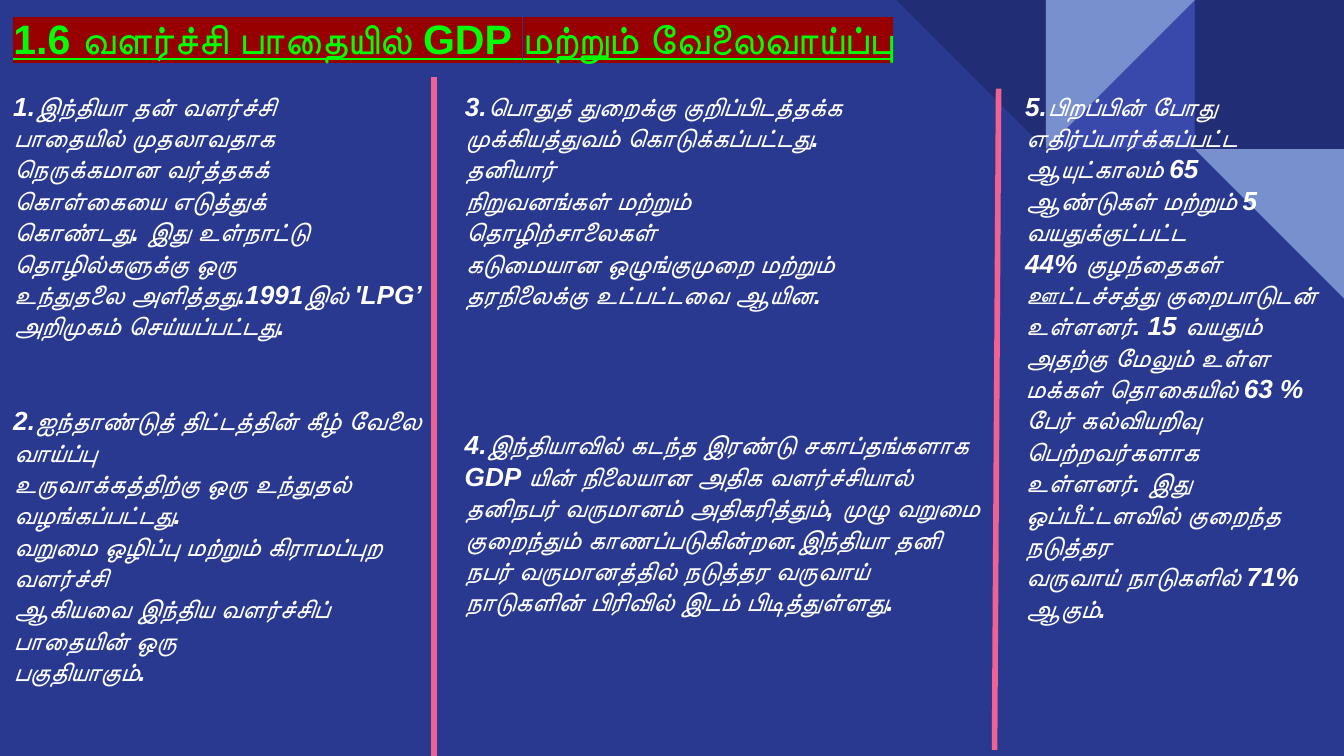
from dataclasses import dataclass

from lxml import etree
from pptx import Presentation
from pptx import util as u
from pptx.dml import color
from pptx.enum import shapes, text
from pptx.oxml import ns


@dataclass(frozen=True)
class Theme:
    background: str = "2A3990"
    navy: str = "212D74"
    indigo: str = "3949AB"
    sky: str = "7890CD"
    divider: str = "F06292"
    title: str = "00FF00"
    highlight: str = "980000"
    body: str = "FFFFFF"
    font: str = "Arial"
    title_size: int = 22
    body_size: int = 14
    divider_width: int = 3


THEME = Theme()
SLIDE_WIDTH = 10
SLIDE_HEIGHT = SLIDE_WIDTH * 9 / 16
TILE = 1.11
TILE_LEFT = SLIDE_WIDTH - 3 * TILE

POINTS = [
    ((0, 0.57, 3.28, 2.29), [
        "1.இந்தியா தன் வளர்ச்சி",
        "பாதையில் முதலாவதாக",
        "நெருக்கமான வர்த்தகக்",
        "கொள்கையை எடுத்துக்",
        "கொண்டது. இது உள்நாட்டு",
        "தொழில்களுக்கு ஒரு",
        "உந்துதலை அளித்தது.1991இல் 'LPG’ அறிமுகம் செய்யப்பட்டது.",
    ]),
    ((0, 2.91, 3.28, 2.29), [
        "2.ஐந்தாண்டுத் திட்டத்தின் கீழ் வேலை வாய்ப்பு",
        "உருவாக்கத்திற்கு ஒரு உந்துதல் வழங்கப்பட்டது.",
        "வறுமை ஒழிப்பு மற்றும் கிராமப்புற வளர்ச்சி",
        "ஆகியவை இந்திய வளர்ச்சிப் பாதையின் ஒரு",
        "பகுதியாகும்.",
    ]),
    ((3.36, 0.57, 3.28, 2.52), [
        "3.பொதுத் துறைக்கு குறிப்பிடத்தக்க",
        "முக்கியத்துவம் கொடுக்கப்பட்டது. தனியார்",
        "நிறுவனங்கள் மற்றும் தொழிற்சாலைகள்",
        "கடுமையான ஒழுங்குமுறை மற்றும் தரநிலைக்கு உட்பட்டவை ஆயின.",
    ]),
    ((3.36, 3.09, 4.04, 2.52), [
        "4.இந்தியாவில் கடந்த இரண்டு சகாப்தங்களாக",
        "GDP யின் நிலையான அதிக வளர்ச்சியால் தனிநபர் வருமானம் அதிகரித்தும், "
        "முழு வறுமை குறைந்தும் காணப்படுகின்றன.இந்தியா தனி நபர் வருமானத்தில் "
        "நடுத்தர வருவாய் நாடுகளின் பிரிவில் இடம் பிடித்துள்ளது.",
    ]),
    ((7.53, 0.57, 2.47, 5.06), [
        "5.பிறப்பின் போது எதிர்ப்பார்க்கப்பட்ட",
        "ஆயுட்காலம் 65 ஆண்டுகள் மற்றும் 5 வயதுக்குட்பட்ட",
        "44% குழந்தைகள் ஊட்டச்சத்து குறைபாடுடன்",
        "உள்ளனர். 15 வயதும் அதற்கு மேலும் உள்ள மக்கள் தொகையில் 63 % பேர் "
        "கல்வியறிவு பெற்றவர்களாக",
        "உள்ளனர். இது ஒப்பீட்டளவில் குறைந்த நடுத்தர",
        "வருவாய் நாடுகளில் 71% ஆகும்.",
    ]),
]


def rgb(value):
    return color.RGBColor.from_string(value)


def add_tile(slide, column, row, fill, kind=shapes.MSO_SHAPE.RIGHT_TRIANGLE,
             rotation=0, flipped=False):
    left, top = TILE_LEFT + column * TILE, row * TILE
    tile = slide.shapes.add_shape(
        kind, u.Inches(left), u.Inches(top), u.Inches(TILE), u.Inches(TILE))
    tile.shadow.inherit = False
    tile.fill.solid()
    tile.fill.fore_color.rgb = rgb(fill)
    tile.line.fill.background()
    tile.rotation = rotation
    if flipped:
        tile._element.spPr.get_or_add_xfrm().set("flipH", "1")


def add_corner_pattern(slide):
    add_tile(slide, 2, 0, THEME.navy, kind=shapes.MSO_SHAPE.RECTANGLE)
    add_tile(slide, 1, 0, THEME.indigo, flipped=True)
    add_tile(slide, 1, 0, THEME.sky, rotation=180, flipped=True)
    add_tile(slide, 0, 0, THEME.navy, rotation=180)
    add_tile(slide, 2, 1, THEME.sky, rotation=180)


def prepare_frame(frame):
    frame.word_wrap = True
    frame.auto_size = text.MSO_AUTO_SIZE.SHAPE_TO_FIT_TEXT
    frame.vertical_anchor = text.MSO_ANCHOR.TOP
    frame.margin_left = frame.margin_right = u.Inches(0.1)
    frame.margin_top = frame.margin_bottom = u.Inches(0.1)


def add_run(paragraph, wording, size, fill):
    paragraph.alignment = text.PP_ALIGN.LEFT
    run = paragraph.add_run()
    run.text = wording
    run.font.size = u.Pt(size)
    run.font.bold = True
    run.font.color.rgb = rgb(fill)
    run.font.name = THEME.font
    latin = run.font._element.find(ns.qn("a:latin"))
    complex_script = etree.Element(ns.qn("a:cs"), typeface=THEME.font)
    latin.addnext(complex_script)
    return run


def highlight(run, fill):
    marker = etree.Element(ns.qn("a:highlight"))
    etree.SubElement(marker, ns.qn("a:srgbClr"), val=fill)
    run.font._element.find(ns.qn("a:solidFill")).addnext(marker)


def set_title(slide, wording):
    title = slide.shapes.title
    title.left, title.top = u.Inches(0), u.Inches(0)
    title.width, title.height = u.Inches(SLIDE_WIDTH), u.Inches(0.57)
    prepare_frame(title.text_frame)
    run = add_run(title.text_frame.paragraphs[0], wording,
                  THEME.title_size, THEME.title)
    run.font.underline = True
    highlight(run, THEME.highlight)
    slide.shapes._spTree.append(title._element)


def add_point(slide, box, lines):
    point = slide.shapes.add_textbox(*map(u.Inches, box))
    frame = point.text_frame
    prepare_frame(frame)
    for index, line in enumerate(lines):
        paragraph = frame.add_paragraph() if index else frame.paragraphs[0]
        run = add_run(paragraph, line, THEME.body_size, THEME.body)
        run.font.italic = True


def add_divider(slide, *ends):
    divider = slide.shapes.add_connector(
        shapes.MSO_CONNECTOR.STRAIGHT, *map(u.Inches, ends))
    divider.line.color.rgb = rgb(THEME.divider)
    divider.line.width = u.Pt(THEME.divider_width)
    etree.SubElement(divider._element.spPr, ns.qn("a:effectLst"))


def main():
    deck = Presentation()
    deck.slide_width = u.Inches(SLIDE_WIDTH)
    deck.slide_height = u.Inches(SLIDE_HEIGHT)
    slide = deck.slides.add_slide(deck.slide_layouts[5])
    slide.background.fill.solid()
    slide.background.fill.fore_color.rgb = rgb(THEME.background)

    add_corner_pattern(slide)
    set_title(slide, "1.6 வளர்ச்சி பாதையில் GDP மற்றும் வேலைவாய்ப்பு")
    for box, lines in POINTS:
        add_point(slide, box, lines)
    add_divider(slide, 3.23, 0.57, 3.23, SLIDE_HEIGHT)
    add_divider(slide, 7.43, 0.66, 7.4, 5.58)
    deck.save("out.pptx")


if __name__ == "__main__":
    main()
